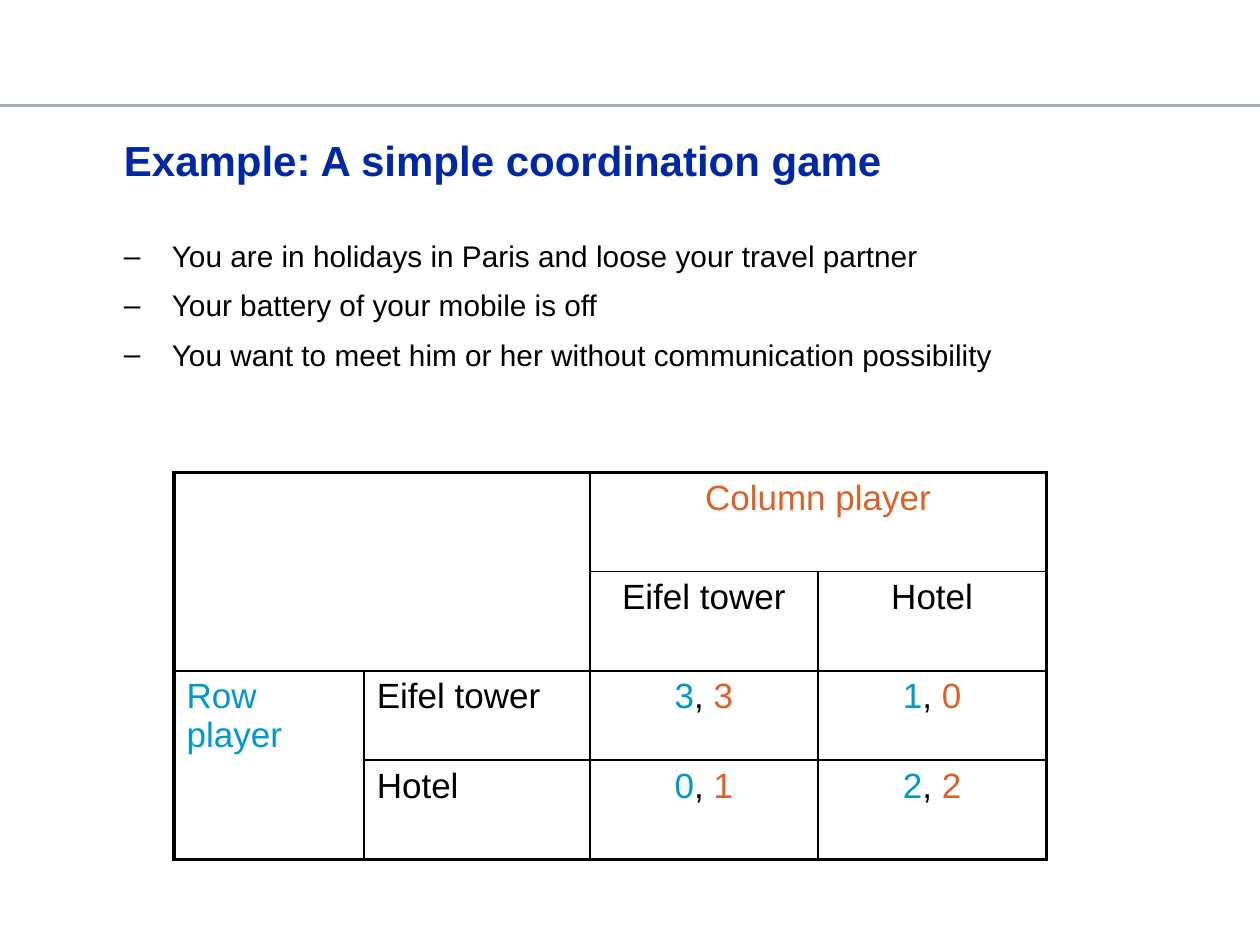
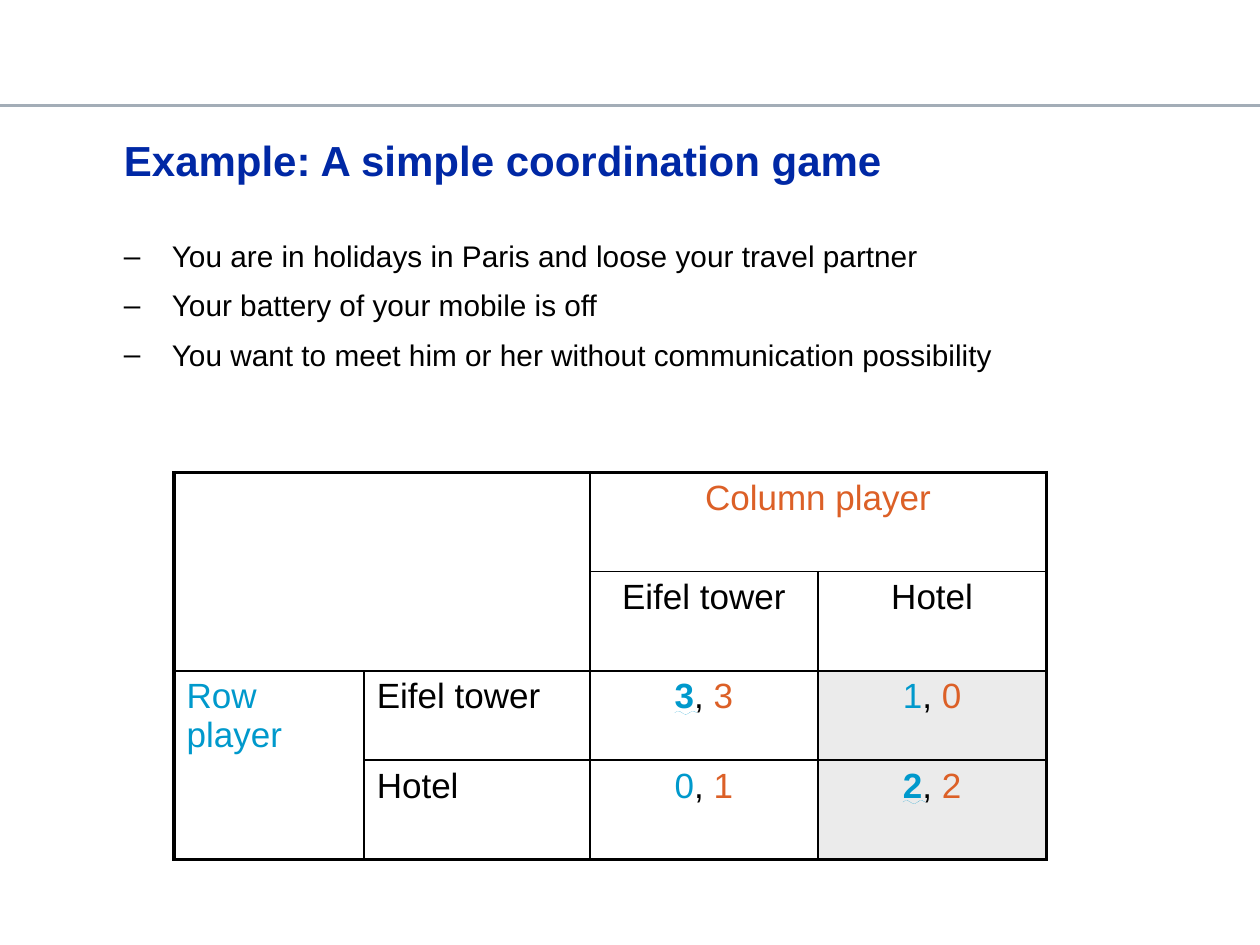
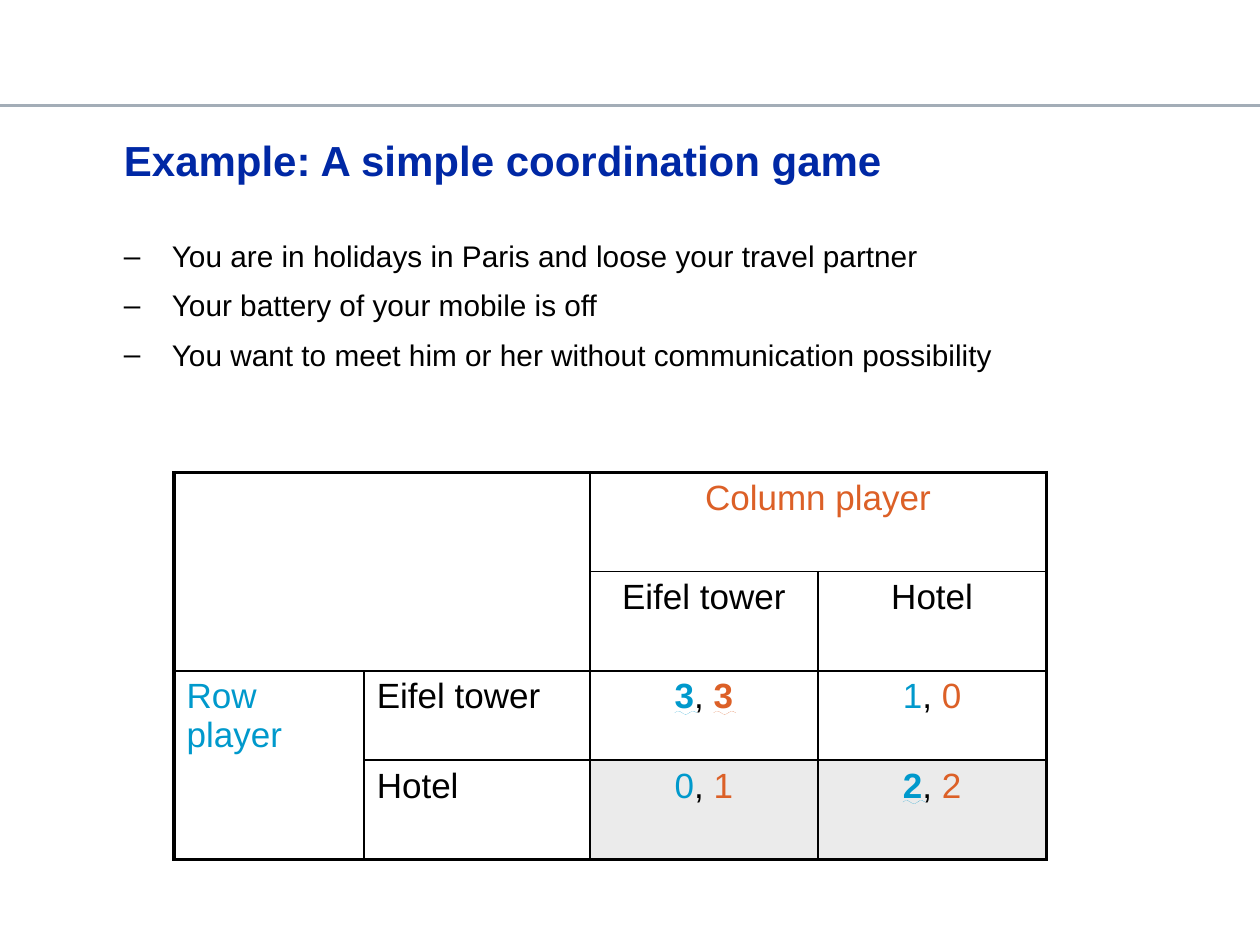
from dataclasses import dataclass

from lxml.etree import SubElement as Sub
from pptx import Presentation
from pptx.dml.color import RGBColor as Rgb
from pptx.enum.shapes import MSO_CONNECTOR as Conn
from pptx.enum.text import MSO_ANCHOR as Anchor
from pptx.enum.text import MSO_AUTO_SIZE as Auto
from pptx.enum.text import MSO_UNDERLINE as Under
from pptx.enum.text import PP_ALIGN as Align
from pptx.oxml.ns import qn
from pptx.util import Pt


@dataclass(frozen=True)
class Theme:
    face: str = "Arial"
    head: str = "0028A5"
    ink: str = "000000"
    rule: str = "A3ADB7"
    row: str = "0099CC"
    col: str = "DC6027"
    shade: str = "D9D9D9"
    big: float = 24
    mid: float = 20
    small: float = 17
    lead: float = 1.1
    gap: float = 5.7
    hang: float = 27.36
    thick: float = 2.25
    thin: float = 1


THEME = Theme()
WIDE, HIGH = 720, 540
RULE_Y = 60.3
HEAD_BOX = (70.8, 71.3, 578, 39.6)
LIST_BOX = (70.8, 133.9, 588, 345.6)
GAME_BOX = (99.4, 270, 499, 221.4)
COLS = (108.7, 129, 130.4, 130.4)
ROWS = (56.7, 56.7, 51, 56.7)

HEAD = "Example: A simple coordination game"
POINTS = (
    "You are in holidays in Paris and loose your travel partner",
    "Your battery of your mobile is off",
    "You want to meet him or her without communication possibility",
)
MOVES = ("Eifel tower", "Hotel")
PAYS = ((("3", "3"), ("1", "0")), (("0", "1"), ("2", "2")))
STEPS = (
    {"best": set(), "grey": set()},
    {"best": {(0, 0, 0), (1, 1, 0)}, "grey": {(0, 1), (1, 1)}},
    {"best": {(0, 0, 0), (0, 0, 1), (1, 1, 0)}, "grey": {(1, 0), (1, 1)}},
)


def put(item, form):
    for key, value in form.items():
        setattr(item, key, value)


def write(para, text, size, tint, **form):
    run = para.add_run()
    run.text = text
    put(run.font, {"name": THEME.face, "size": Pt(size), **form})
    run.font.color.rgb = Rgb.from_string(tint)


def place(shape, box, top=0):
    put(shape, dict(zip(("left", "top", "width", "height"), map(Pt, box))))
    frame = shape.text_frame
    put(frame, {
        "margin_left": 0, "margin_top": Pt(top), "margin_right": 0,
        "margin_bottom": 0, "word_wrap": True, "auto_size": Auto.NONE,
        "vertical_anchor": Anchor.TOP,
    })
    return frame


def add_rule(slide, layout):
    line = slide.shapes.add_connector(
        Conn.STRAIGHT, 0, Pt(RULE_Y), Pt(WIDE), Pt(RULE_Y))
    line.line.width = Pt(1.25)
    line.line.color.rgb = Rgb.from_string(THEME.rule)
    Sub(line.element.spPr, qn("a:effectLst"))
    layout.shapes.element.append(line.element)


def add_head(slide, box):
    para = place(slide.shapes.title, box, 2.9).paragraphs[0]
    put(para, {"alignment": Align.LEFT, "line_spacing": THEME.lead})
    write(para, HEAD, THEME.big, THEME.head, bold=True)


def add_list(slide, box):
    frame = place(slide.placeholders[1], box)
    for num, text in enumerate(POINTS):
        para = frame.add_paragraph() if num else frame.paragraphs[0]
        prop = para._p.get_or_add_pPr()
        prop.set("marL", str(Pt(THEME.hang)))
        prop.set("indent", str(-Pt(THEME.hang)))
        Sub(prop, qn("a:buChar"), char="–")
        put(para, {
            "level": 1, "alignment": Align.LEFT,
            "line_spacing": THEME.lead,
            "space_before": Pt(THEME.gap if num else 0),
        })
        write(para, text, THEME.small, THEME.ink)


def edge(cell, row, col):
    prop = cell._tc.get_or_add_tcPr()
    outer = {
        "L": col == 0,
        "R": col + cell.span_width == len(COLS),
        "T": row == 0,
        "B": row + cell.span_height == len(ROWS),
    }
    for side, out in outer.items():
        width = Pt(THEME.thick if out else THEME.thin)
        line = Sub(prop, qn(f"a:ln{side}"), w=str(width))
        fill = Sub(line, qn("a:solidFill"))
        Sub(fill, qn("a:srgbClr"), val=THEME.ink)


def tint(cell):
    cell.fill.solid()
    cell.fill.fore_color.rgb = Rgb.from_string(THEME.shade)
    shade = cell._tc.tcPr.find(f".//{qn('a:solidFill')}[last()]")
    shade = cell._tc.tcPr.findall(qn("a:solidFill"))[-1][0]
    Sub(shade, qn("a:alpha"), val="50000")


def label(cell, text, hue, side=Align.CENTER):
    para = cell.text_frame.paragraphs[0]
    para.alignment = side
    write(para, text, THEME.mid, hue)


def add_pay(cell, pair, best):
    para = cell.text_frame.paragraphs[0]
    para.alignment = Align.CENTER
    for who, hue in enumerate((THEME.row, THEME.col)):
        if who:
            write(para, ", ", THEME.mid, THEME.ink)
        form = {"bold": True, "underline": Under.WAVY_LINE}
        write(para, pair[who], THEME.mid, hue, **(form if who in best else {}))


def add_game(slide, box, best, grey):
    game = slide.shapes.add_table(len(ROWS), len(COLS), *map(Pt, box)).table
    put(game, {"first_row": False, "horz_banding": False})
    for track, size in zip(game.columns, COLS):
        track.width = Pt(size)
    for track, size in zip(game.rows, ROWS):
        track.height = Pt(size)
    for start, end in (((0, 0), (1, 1)), ((0, 2), (0, 3)), ((2, 0), (3, 0))):
        game.cell(*start).merge(game.cell(*end))
    for row in range(len(ROWS)):
        for col in range(len(COLS)):
            cell = game.cell(row, col)
            edge(cell, row, col)
            if (row - 2, col - 2) in grey:
                tint(cell)
            else:
                cell.fill.background()
    label(game.cell(0, 2), "Column player", THEME.col)
    label(game.cell(2, 0), "Row player", THEME.row, Align.LEFT)
    for row, move in enumerate(MOVES):
        label(game.cell(1, row + 2), move, THEME.ink)
        label(game.cell(row + 2, 0 + 1), move, THEME.ink, Align.LEFT)
        for col, pair in enumerate(PAYS[row]):
            won = {who for who in (0, 1) if (row, col, who) in best}
            add_pay(game.cell(row + 2, col + 2), pair, won)


def main():
    deck = Presentation()
    put(deck, {"slide_width": Pt(WIDE), "slide_height": Pt(HIGH)})
    layout = deck.slide_layouts[1]
    for num, step in enumerate(STEPS):
        slide = deck.slides.add_slide(layout)
        if num == 0:
            add_rule(slide, layout)
        add_head(slide, HEAD_BOX)
        add_list(slide, LIST_BOX)
        add_game(slide, GAME_BOX, **step)
    deck.save("out.pptx")


if __name__ == "__main__":
    main()
